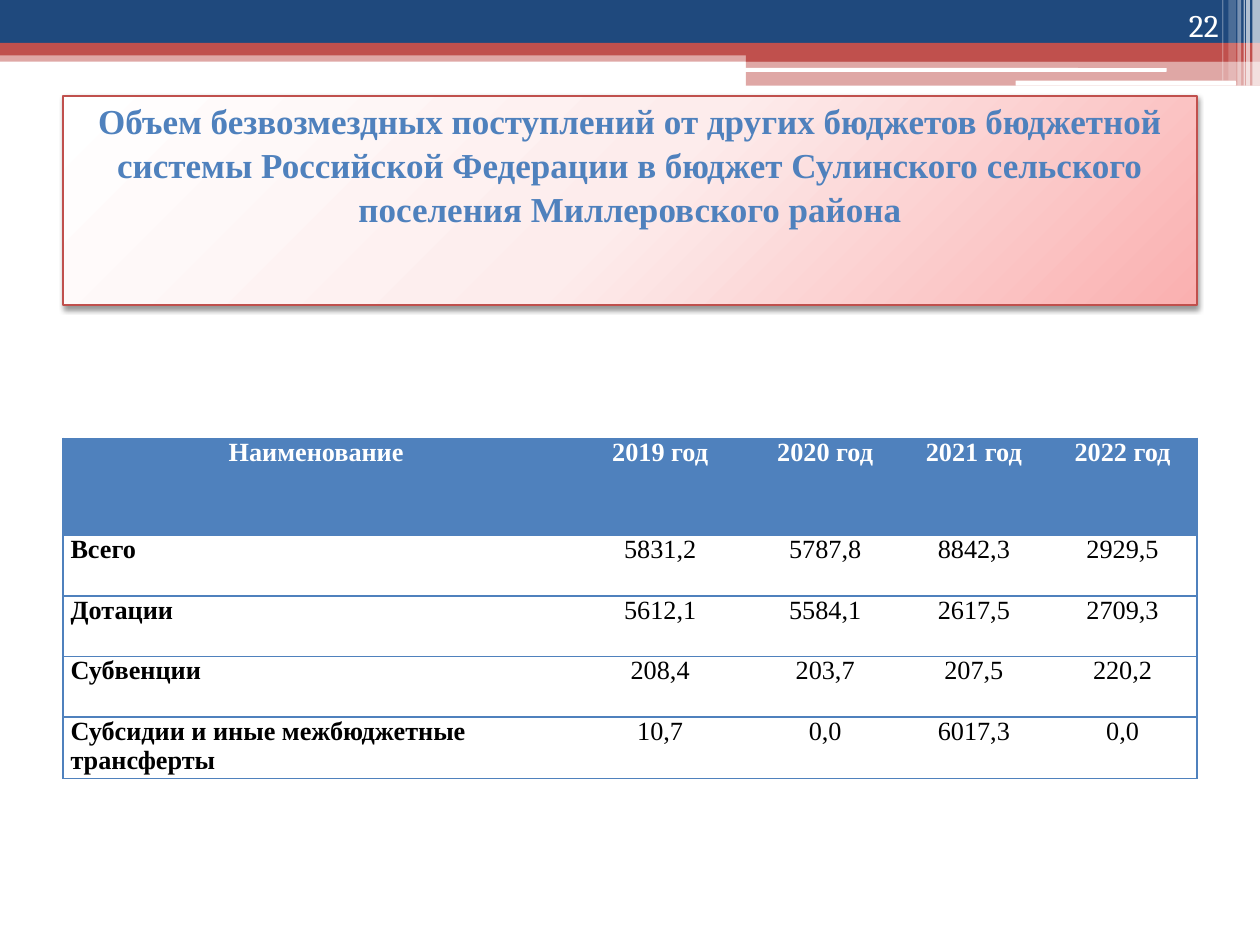
from copy import deepcopy
from dataclasses import dataclass

from lxml import etree
from pptx import Presentation
from pptx.dml.color import RGBColor
from pptx.enum.shapes import MSO_SHAPE
from pptx.enum.text import MSO_ANCHOR, PP_ALIGN
from pptx.oxml.ns import qn
from pptx.util import Inches, Pt

RECT, ROUND = MSO_SHAPE.RECTANGLE, MSO_SHAPE.ROUNDED_RECTANGLE
LEFT, CENTER, RIGHT = PP_ALIGN.LEFT, PP_ALIGN.CENTER, PP_ALIGN.RIGHT
TOP, BOTTOM = MSO_ANCHOR.TOP, MSO_ANCHOR.BOTTOM


@dataclass(frozen=True)
class Theme:
    navy: str = "1F497D"
    red: str = "C0504D"
    blue: str = "4F81BD"
    white: str = "FFFFFF"
    black: str = "000000"
    blush: tuple = ("FFFFFF", "FDECEC", "FAB0B0")
    body_font: str = "Times New Roman"
    number_font: str = "Cambria"
    title_size: float = 20
    table_size: float = 15
    number_size: float = 18
    line: float = 1


class SlideBuilder:
    def __init__(self, slide, theme):
        self.s = slide
        self.t = theme

    def set_text(self, tf, text, size, color, align, bold=False, font=None):
        p = tf.paragraphs[0]
        p.text = text
        p.alignment = align
        p.font.name = font or self.t.body_font
        p.font.size = Pt(size)
        p.font.bold = bold
        p.font.color.rgb = RGBColor.from_string(color)
        return p

    def bar(self, x, y, w, h, color, opacity=100, kind=RECT):
        sp = self.s.shapes.add_shape(kind, *map(Inches, (x, y, w, h)))
        sp.shadow.inherit = False
        sp.line.fill.background()
        sp.fill.solid()
        sp.fill.fore_color.rgb = RGBColor.from_string(color)
        if opacity < 100:
            clr = sp._element.spPr.find(".//" + qn("a:srgbClr"))
            etree.SubElement(clr, qn("a:alpha"), val=str(opacity * 1000))

    def title(self, x, y, w, h, text):
        sp = self.s.shapes.add_shape(RECT, *map(Inches, (x, y, w, h)))
        sp.line.color.rgb = RGBColor.from_string(self.t.red)
        sp.line.width = Pt(self.t.line)
        # Diagonal three-stop gradient
        sp.fill.gradient()
        sp.fill.gradient_angle = 315
        stops = sp._element.spPr.find(".//" + qn("a:gsLst"))
        stops.insert(1, deepcopy(stops[0]))
        for i, (stop, color) in enumerate(zip(sp.fill.gradient_stops, self.t.blush)):
            stop.position = i / 2
            stop.color.rgb = RGBColor.from_string(color)
        # Soft shadow below
        sp.shadow.inherit = False
        effects = sp._element.spPr.find(qn("a:effectLst"))
        shadow = etree.SubElement(effects, qn("a:outerShdw"), blurRad="40000",
                                  dist="23000", dir="5400000", rotWithShape="0")
        clr = etree.SubElement(shadow, qn("a:srgbClr"), val=self.t.black)
        etree.SubElement(clr, qn("a:alpha"), val="40000")
        tf = sp.text_frame
        tf.word_wrap = True
        tf.vertical_anchor = TOP
        tf.margin_top = Inches(0.01)
        p = self.set_text(tf, text, self.t.title_size, self.t.blue, CENTER, True)
        p.line_spacing = 1.05

    def number(self, x, y, w, h, text):
        tf = self.s.shapes.add_textbox(*map(Inches, (x, y, w, h))).text_frame
        tf.word_wrap = True
        tf.vertical_anchor = BOTTOM
        self.set_text(tf, text, self.t.number_size, self.t.white, RIGHT,
                      font=self.t.number_font)

    def border(self, cell, side, visible):
        ln = etree.SubElement(cell._tc.get_or_add_tcPr(), qn("a:ln" + side),
                              w=str(Pt(self.t.line)))
        if visible:
            fill = etree.SubElement(ln, qn("a:solidFill"))
            etree.SubElement(fill, qn("a:srgbClr"), val=self.t.blue)
        else:
            etree.SubElement(ln, qn("a:noFill"))

    def table(self, x, y, widths, heights, rows):
        frame = self.s.shapes.add_table(
            len(rows), len(widths),
            *map(Inches, (x, y, sum(widths), sum(heights))))
        tbl = frame.table
        tbl.horz_banding = False
        for col, w in zip(tbl.columns, widths):
            col.width = Inches(w)
        for row, h in zip(tbl.rows, heights):
            row.height = Inches(h)
        for i, values in enumerate(rows):
            for j, value in enumerate(values):
                self.cell(tbl.cell(i, j), value, header=i == 0, first=j == 0,
                          last=j == len(widths) - 1)

    def cell(self, cell, text, header, first, last):
        cell.margin_left = cell.margin_right = Inches(0.06)
        cell.margin_top = cell.margin_bottom = 0
        cell.vertical_anchor = TOP
        for side, visible in (("L", first), ("R", last), ("T", True), ("B", True)):
            self.border(cell, side, visible)
        if header:
            cell.fill.solid()
            cell.fill.fore_color.rgb = RGBColor.from_string(self.t.blue)
        else:
            cell.fill.background()
        self.set_text(cell.text_frame, text, self.t.table_size,
                      self.t.white if header else self.t.black,
                      LEFT if first and not header else CENTER, header or first)


def main():
    prs = Presentation()
    prs.slide_width, prs.slide_height = Inches(10), Inches(7.5)
    theme = Theme()
    b = SlideBuilder(prs.slides.add_slide(prs.slide_layouts[6]), theme)

    # Header bands
    b.bar(0, 0.4, 10, 0.09, theme.red, 50)
    b.bar(0, 0, 10, 0.34, theme.navy)
    b.bar(0, 0.34, 10, 0.1, theme.red)
    b.bar(5.92, 0.39, 4.08, 0.1, theme.red)
    b.bar(5.92, 0.48, 4.08, 0.2, theme.red, 50)
    b.bar(5.91, 0.54, 3.35, 0.03, theme.white, kind=ROUND)
    b.bar(8.06, 0.64, 1.75, 0.04, theme.white, kind=ROUND)

    # Translucent stripes in the right corner
    for x, w, h, opacity in ((9.94, 0.06, 0.68, 65), (9.89, 0.03, 0.68, 65),
                             (9.87, 0.01, 0.68, 60), (9.82, 0.03, 0.68, 40),
                             (9.75, 0.06, 0.64, 20), (9.7, 0.01, 0.64, 30)):
        b.bar(x, 0, w, h, theme.white, opacity)

    # Title
    b.title(0.5, 0.76, 9, 1.66,
            "Объем безвозмездных поступлений от других бюджетов бюджетной "
            "системы Российской Федерации в бюджет Сулинского сельского "
            "поселения Миллеровского района")

    # Transfers by year
    b.table(0.5, 3.48, [4.02, 1.44] + [1.18] * 3, [0.77] + [0.48] * 3 + [0.49], [
        ["Наименование"] + [f"{year} год" for year in range(2019, 2023)],
        ["Всего", "5831,2", "5787,8", "8842,3", "2929,5"],
        ["Дотации", "5612,1", "5584,1", "2617,5", "2709,3"],
        ["Субвенции", "208,4", "203,7", "207,5", "220,2"],
        ["Субсидии и иные межбюджетные трансферты", "10,7", "0,0", "6017,3", "0,0"],
    ])

    # Slide number
    b.number(8.94, 0, 0.83, 0.4, "22")

    prs.save("out.pptx")


if __name__ == "__main__":
    main()
